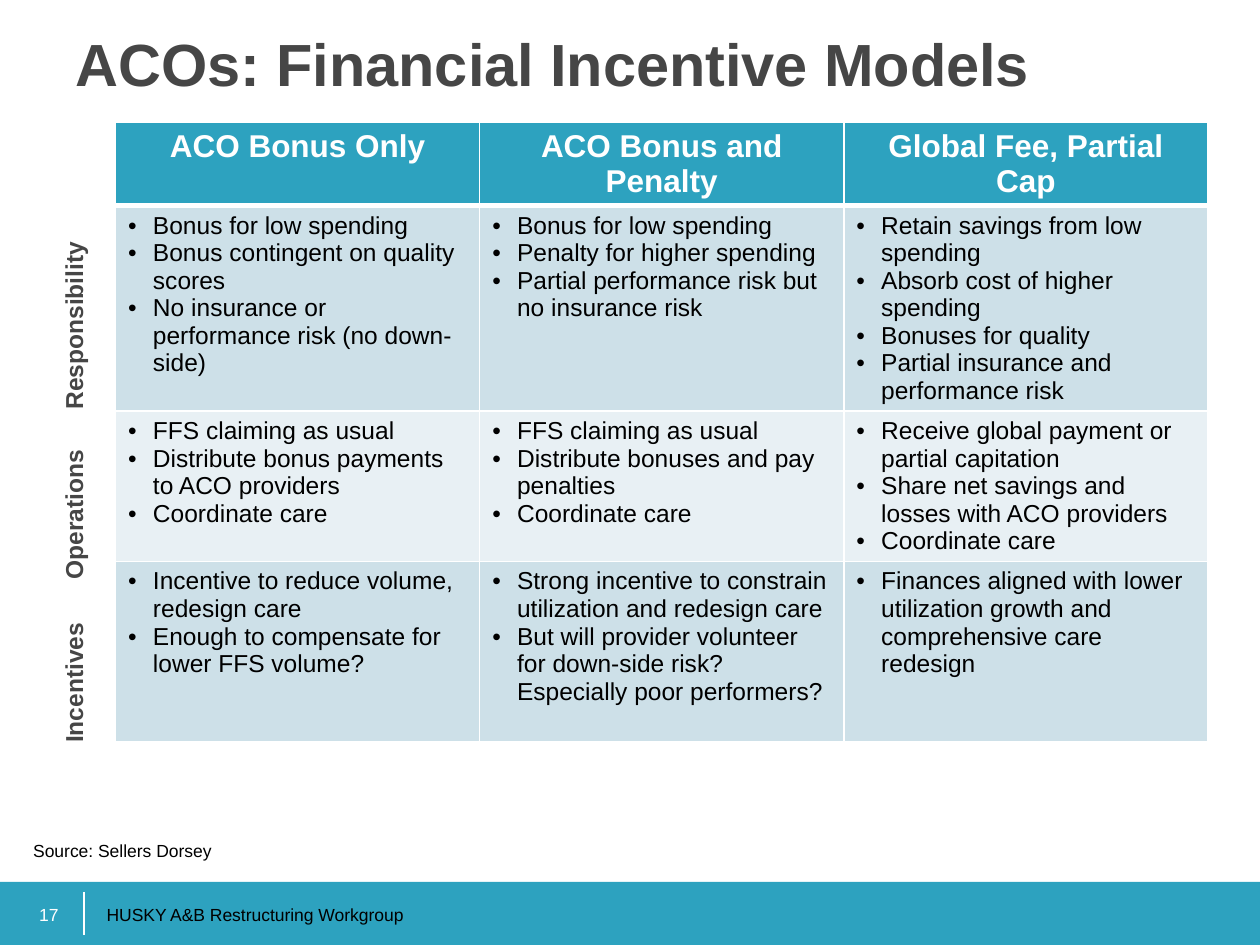
from lxml import etree
from pptx import Presentation
from pptx.dml.color import RGBColor
from pptx.enum import shapes, text
from pptx.oxml import ns
from pptx.util import Cm, Pt

TEAL = RGBColor(0x2D, 0xA2, 0xBF)
BAND_DARK = RGBColor(0xCD, 0xE0, 0xE8)
BAND_LIGHT = RGBColor(0xE8, 0xF0, 0xF4)
GREY = RGBColor(0x46, 0x46, 0x46)
BLACK = RGBColor(0, 0, 0)
WHITE = RGBColor(0xFF, 0xFF, 0xFF)


def write(tf, lines, size=10, color=BLACK, bold=False, align=text.PP_ALIGN.LEFT,
          anchor=text.MSO_ANCHOR.TOP, bullet=False):
    tf.word_wrap = True
    tf.vertical_anchor = anchor
    for i, line in enumerate(lines):
        p = tf.paragraphs[0] if i == 0 else tf.add_paragraph()
        p.alignment = align
        if bullet:
            pPr = p._p.get_or_add_pPr()
            pPr.set("marL", str(Cm(0.5)))
            pPr.set("indent", str(-Cm(0.5)))
            etree.SubElement(pPr, ns.qn("a:buFont"), typeface="Arial")
            etree.SubElement(pPr, ns.qn("a:buChar"), char="•")
        r = p.add_run()
        r.text = line
        r.font.name = "Arial"
        r.font.size = Pt(size)
        r.font.bold = bold
        r.font.color.rgb = color


def set_borders(cell, bottom):
    """Give the cell white borders: 1 pt, but the given width at the bottom."""
    tcPr = cell._tc.get_or_add_tcPr()
    for side, width in (("L", 1), ("R", 1), ("T", 1), ("B", bottom)):
        ln = etree.SubElement(tcPr, ns.qn("a:ln" + side), w=str(Pt(width)))
        fill = etree.SubElement(ln, ns.qn("a:solidFill"))
        etree.SubElement(fill, ns.qn("a:srgbClr"), val=str(WHITE))


prs = Presentation()
prs.slide_width, prs.slide_height = Cm(25.4), Cm(19.05)
s = prs.slides.add_slide(prs.slide_layouts[6])

# Footer band
band = s.shapes.add_shape(shapes.MSO_SHAPE.RECTANGLE, 0, Cm(17.78), Cm(25.4), Cm(1.27))
band.shadow.inherit = False
band.fill.solid()
band.fill.fore_color.rgb = TEAL
band.line.fill.background()

divider = s.shapes.add_connector(shapes.MSO_CONNECTOR.STRAIGHT,
                                 Cm(1.69), Cm(17.98), Cm(1.69), Cm(18.84))
divider.line.color.rgb = WHITE
divider.line.width = Pt(1)
etree.SubElement(divider._element.spPr, ns.qn("a:effectLst"))

# Table of models
headers = ["ACO Bonus Only", "ACO Bonus and Penalty", "Global Fee, Partial Cap"]
body = [
    [["Bonus for low spending", "Bonus contingent on quality scores",
      "No insurance or performance risk (no down-side)"],
     ["Bonus for low spending", "Penalty for higher spending",
      "Partial performance risk but no insurance risk"],
     ["Retain savings from low spending", "Absorb cost of higher spending",
      "Bonuses for quality", "Partial insurance and performance risk"]],
    [["FFS claiming as usual", "Distribute bonus payments to ACO providers",
      "Coordinate care"],
     ["FFS claiming as usual", "Distribute bonuses and pay penalties", "Coordinate care"],
     ["Receive global payment or partial capitation",
      "Share net savings and losses with ACO providers", "Coordinate care"]],
    [["Incentive to reduce volume, redesign care",
      "Enough to compensate for lower FFS volume?"],
     ["Strong incentive to constrain utilization and redesign care",
      "But will provider volunteer for down-side risk? Especially poor performers?"],
     ["Finances aligned with lower utilization growth and comprehensive care redesign"]],
]
row_heights = [1.65, 4.13, 3.03, 3.63]
tbl = s.shapes.add_table(4, 3, Cm(2.33), Cm(2.47), Cm(22.02), Cm(sum(row_heights))).table
for col in tbl.columns:
    col.width = Cm(7.34)
for row, height in zip(tbl.rows, row_heights):
    row.height = Cm(height)

for c, header in enumerate(headers):
    cell = tbl.cell(0, c)
    set_borders(cell, 3)
    cell.fill.solid()
    cell.fill.fore_color.rgb = TEAL
    write(cell.text_frame, [header], size=18, color=WHITE, bold=True,
          align=text.PP_ALIGN.CENTER)

for r, row in enumerate(body, start=1):
    for c, lines in enumerate(row):
        cell = tbl.cell(r, c)
        set_borders(cell, 1)
        cell.fill.solid()
        cell.fill.fore_color.rgb = BAND_DARK if r % 2 else BAND_LIGHT
        write(cell.text_frame, lines, size=14, bullet=True)

# Rotated row labels, stacked without gaps
top = 4.45
for label, height in (("Responsibility", 4.23), ("Operations", 3.39), ("Incentives", 3.39)):
    tf = s.shapes.add_textbox(Cm(1.06), Cm(top), Cm(1.12), Cm(height)).text_frame
    write(tf, [label], size=14, color=GREY, bold=True, align=text.PP_ALIGN.CENTER)
    tf._txBody.bodyPr.set("vert", "vert270")
    top += height

# Title, source and footer texts
BOTTOM = text.MSO_ANCHOR.BOTTOM
for line, box, style in (
    ("ACOs: Financial Incentive Models", (1.27, 0.42, 22.86, 3.18),
     dict(size=34, color=GREY, bold=True)),
    ("Source: Sellers Dorsey", (0.42, 16.8, 9.53, 0.68), {}),
    ("HUSKY A&B Restructuring Workgroup", (1.9, 17.76, 11.43, 1.01), dict(anchor=BOTTOM)),
    ("17", (0.42, 17.76, 1.01, 1.01),
     dict(color=WHITE, align=text.PP_ALIGN.RIGHT, anchor=BOTTOM)),
):
    tf = s.shapes.add_textbox(*map(Cm, box)).text_frame
    write(tf, [line], **style)

prs.save("out.pptx")
